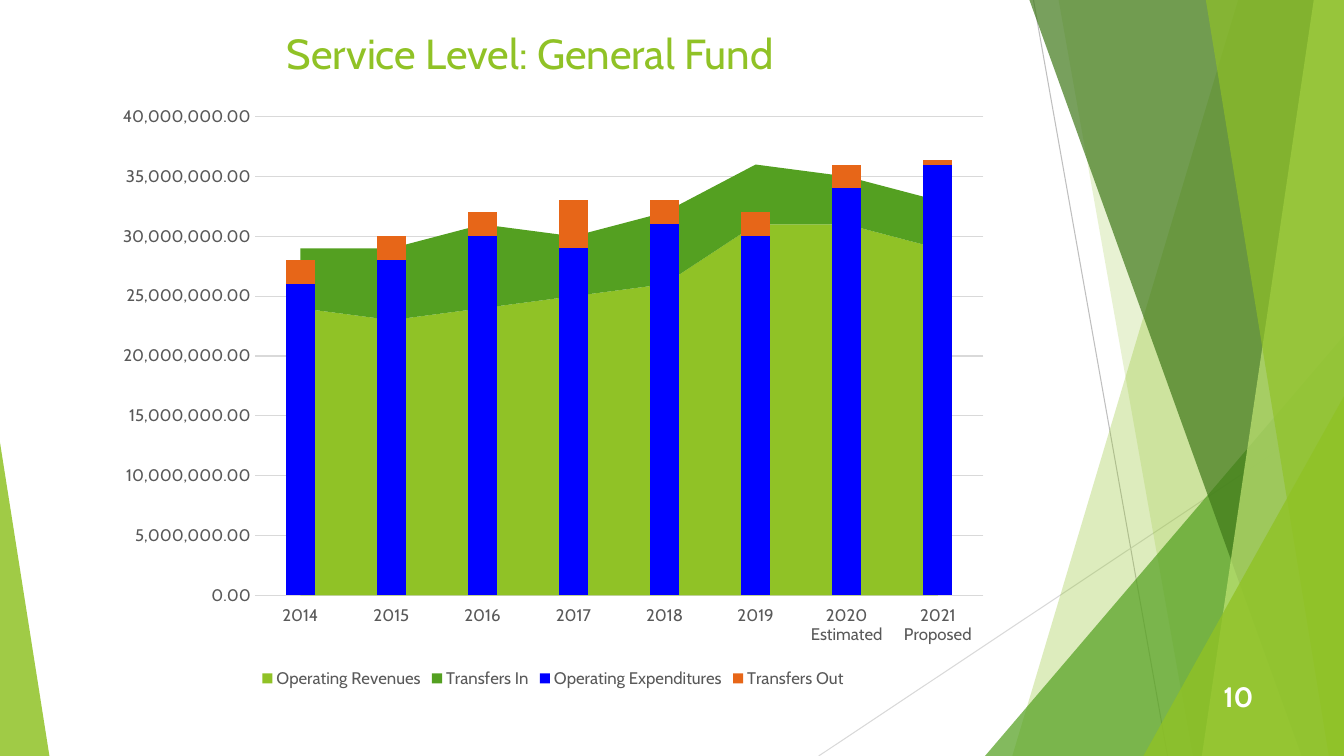
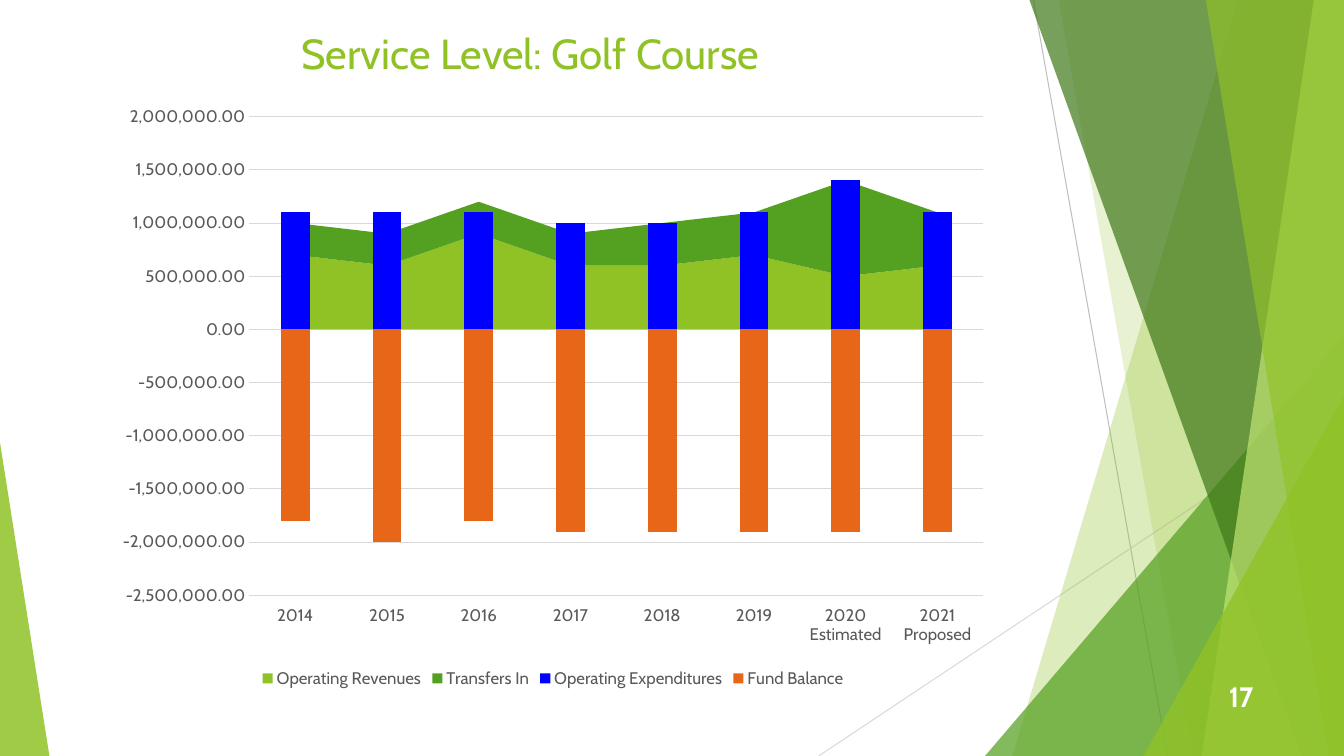
from dataclasses import dataclass
from pptx import Presentation
from pptx.chart.data import CategoryChartData as Data
from pptx.dml.color import RGBColor as Rgb
from pptx.enum.chart import XL_CHART_TYPE as Kind, XL_LEGEND_POSITION as Place
from pptx.enum.chart import XL_TICK_LABEL_POSITION as Label, XL_TICK_MARK as Tick
from pptx.enum.shapes import MSO_CONNECTOR as Link, MSO_SHAPE as Shape
from pptx.enum.text import MSO_ANCHOR as Anchor, PP_ALIGN as Align
from pptx.oxml.ns import qn
from pptx.oxml.xmlchemy import OxmlElement as Node
from pptx.util import Inches, Pt


@dataclass(frozen=True)
class Theme:
    wide: float = 13.33
    high: float = 7.5
    font: str = "Cabin"
    lime: str = "90C226"
    leaf: str = "54A021"
    moss: str = "3F7819"
    pale: str = "C0E474"
    blue: str = "0000FF"
    rust: str = "E76618"
    ink: str = "595959"
    grid: str = "D9D9D9"
    rule: str = "BFBFBF"
    white: str = "FFFFFF"
    head: int = 30
    num: int = 20
    small: int = 12
    hair: float = 0.75


T = Theme()
YEARS = ["2014", "2015", "2016", "2017", "2018", "2019",
         "2020 Estimated", "2021 Proposed"]
PAGES = [
    ("Service Level: General Fund", "10", (0, 40, 5), {
        "Operating Revenues": [24, 23, 24, 25, 26, 31, 31, 29],
        "Transfers In": [5, 6, 7, 5, 6, 5, 4, 4],
        "Operating Expenditures": [26, 28, 30, 29, 31, 30, 34, 36],
        "Transfers Out": [2, 2, 2, 4, 2, 2, 2, 0.4],
    }),
    ("Service Level: Golf Course", "17", (-2.5, 2, 0.5), {
        "Operating Revenues": [0.7, 0.6, 0.9, 0.6, 0.6, 0.7, 0.5, 0.6],
        "Transfers In": [0.3, 0.3, 0.3, 0.3, 0.4, 0.4, 0.9, 0.5],
        "Operating Expenditures": [1.1, 1.1, 1.1, 1, 1, 1.1, 1.4, 1.1],
        "Fund Balance": [-1.8, -2, -1.8, -1.9, -1.9, -1.9, -1.9, -1.9],
    }),
]


def box(*sides):
    return [Inches(side) for side in sides]


def mil(val):
    return round(val * 1000000)


def style(font, size, tone, bold=False):
    font.name, font.size, font.bold = T.font, Pt(size), bold
    font.color.rgb = Rgb.from_string(tone)


def paint(fill, tone):
    fill.solid()
    fill.fore_color.rgb = Rgb.from_string(tone)


def stroke(line, tone):
    paint(line.fill, tone)
    line.width = Pt(T.hair)


def write(shape, text, size, tone, align, bold=False):
    shape.text_frame.text = text
    para = shape.text_frame.paragraphs[0]
    para.alignment = align
    style(para.runs[0].font, size, tone, bold)


def tint(shape, tone, part):
    paint(shape.fill, tone)
    shape.line.fill.background()
    shape.shadow.inherit = False
    alpha = Node("a:alpha")
    alpha.set("val", str(part * 1000))
    next(shape.element.spPr.iter(qn("a:srgbClr"))).append(alpha)
    return shape


def wing(shapes, top, foot, tone, part):
    pen = shapes.build_freeform(*box(top, 0))
    pen.add_line_segments([box(T.wide, 0), box(T.wide, T.high), box(foot, T.high)])
    return tint(pen.convert_to_shape(), tone, part)


def peak(shapes, left, top, width, tip, tone, part):
    shape = shapes.add_shape(Shape.ISOSCELES_TRIANGLE,
                             *box(left, top, width, T.high - top))
    shape.adjustments[0] = tip
    return tint(shape, tone, part)


def ray(shapes, ends, tone):
    line = shapes.add_connector(Link.STRAIGHT, *box(*ends))
    stroke(line.line, tone)
    line.element.spPr.append(Node("a:effectLst"))
    return line


def dress(layout, shapes):
    parts = [
        ray(shapes, (10.25, 0, 11.58, T.high), T.rule),
        ray(shapes, (T.wide, 4.03, 8.12, T.high), T.grid),
        wing(shapes, 12.28, 10.04, T.lime, 30),
        wing(shapes, 10.5, 11.83, T.lime, 20),
        peak(shapes, 9.77, 3.33, 3.56, 1, T.leaf, 72),
        wing(shapes, 10.21, 12.91, T.moss, 70),
        wing(shapes, 13.03, 11.92, T.pale, 70),
        wing(shapes, 11.96, 13.18, T.lime, 65),
        peak(shapes, 11.34, 3.93, 1.99, 1, T.lime, 80),
        peak(shapes, 0, 4.39, 0.49, 0, T.lime, 85),
    ]
    for spot, part in enumerate(parts, 2):
        layout.shapes.element.insert(spot, part.element)
    title = layout.placeholders[0]
    title.left, title.top, title.width, title.height = box(0.17, 0.22, 10.18, 0.71)
    title.text_frame.vertical_anchor = Anchor.TOP


def split(chart):
    root = chart.element
    area = next(root.iter(qn("c:areaChart")))
    bars = Node("c:barChart")
    for tag, val in (("c:barDir", "col"), ("c:grouping", "stacked")):
        node = Node(tag)
        node.set("val", val)
        bars.append(node)
    for ser in area.findall(qn("c:ser"))[2:]:
        bars.append(ser)
    for axis in area.findall(qn("c:axId")):
        node = Node("c:axId")
        node.set("val", axis.get("val"))
        bars.append(node)
    area.addnext(bars)
    for node in root.iter(qn("c:crossBetween")):
        node.set("val", "between")


def scale(chart, span):
    for axis in (chart.category_axis, chart.value_axis):
        axis.major_tick_mark = axis.minor_tick_mark = Tick.NONE
        style(axis.tick_labels.font, T.small, T.ink)
    cats, vals = chart.category_axis, chart.value_axis
    cats.tick_label_position = Label.LOW
    cats.has_major_gridlines = False
    stroke(cats.format.line, T.grid)
    vals.format.line.fill.background()
    vals.has_major_gridlines = True
    stroke(vals.major_gridlines.format.line, T.grid)
    vals.minimum_scale, vals.maximum_scale, vals.major_unit = map(mil, span)
    vals.tick_labels.number_format = "#,##0.00"
    vals.tick_labels.number_format_is_linked = False


def graph(shapes, span, rows):
    data = Data()
    data.categories = YEARS
    for name, vals in rows.items():
        data.add_series(name, [mil(val) for val in vals])
    chart = shapes.add_chart(Kind.AREA_STACKED, *box(1.04, 0.94, 8.89, 5.93), data).chart
    chart.has_title = False
    chart.font.name, chart.font.size = T.font, Pt(10)
    split(chart)
    area, bars = chart.plots
    area.vary_by_categories = bars.vary_by_categories = False
    bars.gap_width, bars.overlap = 219, 100
    for ser, tone in zip([*area.series, *bars.series],
                         (T.lime, T.leaf, T.blue, T.rust)):
        paint(ser.format.fill, tone)
    for ser in bars.series:
        ser.invert_if_negative = False
    scale(chart, span)
    chart.has_legend = True
    chart.legend.position = Place.BOTTOM
    chart.legend.include_in_layout = False
    style(chart.legend.font, T.small, T.ink)


def stamp(shapes, text):
    note = shapes.add_textbox(*box(11.78, 6.71, 0.75, 0.4))
    note.text_frame.word_wrap = True
    note.text_frame.vertical_anchor = Anchor.MIDDLE
    write(note, text, T.num, T.white, Align.RIGHT, True)


def main():
    deck = Presentation()
    deck.slide_width, deck.slide_height = box(T.wide, T.high)
    layout = deck.slide_layouts[5]
    for spot, (title, num, span, rows) in enumerate(PAGES):
        slide = deck.slides.add_slide(layout)
        if spot == 0:
            dress(layout, slide.shapes)
        write(slide.shapes.title, title, T.head, T.lime, Align.CENTER)
        graph(slide.shapes, span, rows)
        stamp(slide.shapes, num)
    deck.save("out.pptx")


if __name__ == "__main__":
    main()
